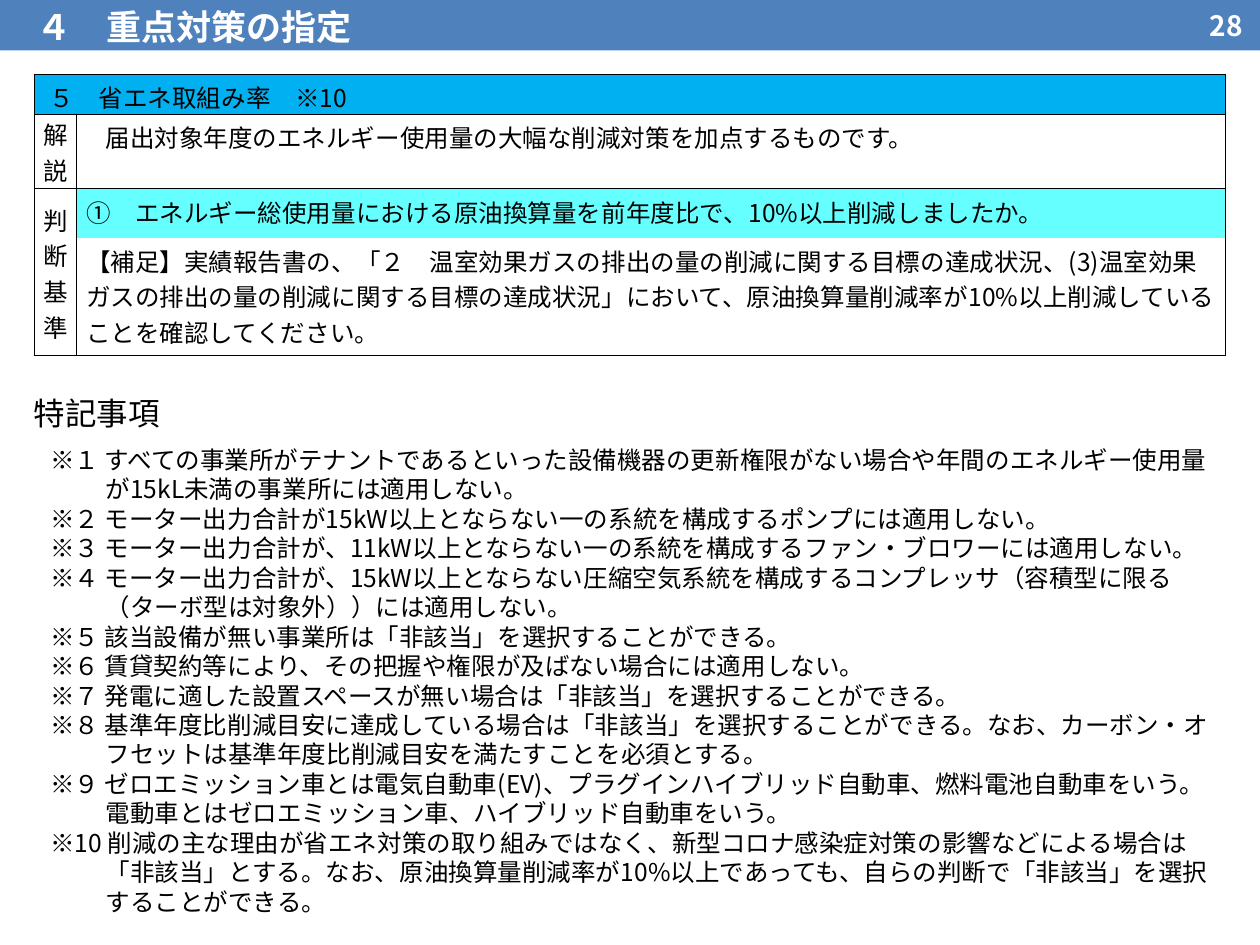
from lxml import etree
from pptx import Presentation
from pptx.dml.color import RGBColor
from pptx.enum.shapes import MSO_SHAPE
from pptx.enum.text import MSO_ANCHOR, PP_ALIGN
from pptx.oxml.ns import qn
from pptx.util import Pt

LEFT, CENTER, RIGHT = PP_ALIGN.LEFT, PP_ALIGN.CENTER, PP_ALIGN.RIGHT
TOP, MIDDLE = MSO_ANCHOR.TOP, MSO_ANCHOR.MIDDLE
RECTANGLE = MSO_SHAPE.RECTANGLE

COLORS = {"band": "4F81BD", "white": "FFFFFF", "black": "000000",
          "heading": "00B0F0", "criterion": "66FFFF"}
FONT = "Noto Sans CJK JP"
HEADING_FONT = "Arial"
BODY_SIZE = 14

TITLE = "４　重点対策の指定"
PAGE_NUMBER = "28"
NOTES_HEADING = "特記事項"
COLUMN_WIDTHS = [23.6, 656.6]
ROW_HEIGHTS = [22, 42.7, 28, 67.6]

HEADING_MARGINS = (8.6, 2.9, 0, 2.9)
LABEL_MARGINS = (0.7, 0.7, 0.7, 0)
CRITERION_MARGINS = (5.8, 2.9, 5.8, 2.9)
CELLS = [
    {"at": (0, 0), "to": (0, 1), "text": "５　省エネ取組み率　※10",
     "margins": HEADING_MARGINS, "anchor": MIDDLE, "fill": "heading", "borders": "LRTB"},
    {"at": (1, 0), "text": "解説", "margins": LABEL_MARGINS,
     "anchor": MIDDLE, "vertical": True, "borders": "LRTB"},
    {"at": (1, 1), "text": "　届出対象年度のエネルギー使用量の大幅な削減対策を加点するものです。",
     "margins": (2.9, 2.9, 2.9, 2.9), "borders": "LRTB"},
    {"at": (2, 0), "to": (3, 0), "text": "判断基準", "margins": LABEL_MARGINS,
     "anchor": MIDDLE, "vertical": True, "borders": "LRTB"},
    {"at": (2, 1), "text": "①　エネルギー総使用量における原油換算量を前年度比で、10%以上削減しましたか。",
     "margins": CRITERION_MARGINS, "fill": "criterion", "borders": "LRT"},
    {"at": (3, 1), "text": "【補足】実績報告書の、「２　温室効果ガスの排出の量の削減に関する目標の達成状況、"
     "(3)温室効果ガスの排出の量の削減に関する目標の達成状況」において、"
     "原油換算量削減率が10%以上削減していることを確認してください。",
     "margins": CRITERION_MARGINS, "borders": "LRB"},
]
NOTES = [
    "※１ すべての事業所がテナントであるといった設備機器の更新権限がない場合や"
    "年間のエネルギー使用量が15kL未満の事業所には適用しない。",
    "※２ モーター出力合計が15kW以上とならない一の系統を構成するポンプには適用しない。",
    "※３ モーター出力合計が、11kW以上とならない一の系統を構成するファン・ブロワーには適用しない。",
    "※４ モーター出力合計が、15kW以上とならない圧縮空気系統を構成するコンプレッサ"
    "（容積型に限る（ターボ型は対象外））には適用しない。",
    "※５ 該当設備が無い事業所は「非該当」を選択することができる。",
    "※６ 賃貸契約等により、その把握や権限が及ばない場合には適用しない。",
    "※７ 発電に適した設置スペースが無い場合は「非該当」を選択することができる。",
    "※８ 基準年度比削減目安に達成している場合は「非該当」を選択することができる。"
    "なお、カーボン・オフセットは基準年度比削減目安を満たすことを必須とする。",
    "※９ ゼロエミッション車とは電気自動車(EV)、プラグインハイブリッド自動車、"
    "燃料電池自動車をいう。電動車とはゼロエミッション車、ハイブリッド自動車をいう。",
    "※10 削減の主な理由が省エネ対策の取り組みではなく、新型コロナ感染症対策の影響などによる場合は"
    "「非該当」とする。なお、原油換算量削減率が10%以上であっても、"
    "自らの判断で「非該当」を選択することができる。",
]


def color(name):
    return RGBColor.from_string(COLORS[name])


def write(paragraph, text, size=BODY_SIZE, ink="black", bold=False, font=FONT, align=LEFT):
    paragraph.alignment = align
    run = paragraph.add_run()
    run.text = text
    run.font.size = Pt(size)
    run.font.bold = bold
    run.font.name = font
    run.font.color.rgb = color(ink)
    east_asian = etree.SubElement(run._r.get_or_add_rPr(), qn("a:ea"))
    east_asian.set("typeface", font)


def set_frame(frame, margins=(7.2, 3.6, 7.2, 3.6), anchor=TOP, wrap=True):
    frame.word_wrap = wrap
    frame.vertical_anchor = anchor
    (frame.margin_left, frame.margin_top,
     frame.margin_right, frame.margin_bottom) = map(Pt, margins)


def add_rectangle(slide, box, fill):
    shape = slide.shapes.add_shape(RECTANGLE, *map(Pt, box))
    shape.shadow.inherit = False
    shape.fill.solid()
    shape.fill.fore_color.rgb = color(fill)
    shape.line.fill.background()
    return shape


def add_text(slide, box, text, anchor=TOP, wrap=True, **style):
    frame = slide.shapes.add_textbox(*map(Pt, box)).text_frame
    set_frame(frame, anchor=anchor, wrap=wrap)
    write(frame.paragraphs[0], text, **style)


def set_borders(cell, sides):
    properties = cell._tc.get_or_add_tcPr()
    for index, side in enumerate("LRTB"):
        line = etree.Element(qn(f"a:ln{side}"), w=str(Pt(0.5)))
        if side in sides:
            fill = etree.SubElement(line, qn("a:solidFill"))
            etree.SubElement(fill, qn("a:srgbClr"), val=COLORS["black"])
        else:
            etree.SubElement(line, qn("a:noFill"))
        properties.insert(index, line)


def add_criteria_table(slide):
    table = slide.shapes.add_table(
        len(ROW_HEIGHTS), len(COLUMN_WIDTHS), Pt(19.8), Pt(42.5),
        Pt(sum(COLUMN_WIDTHS)), Pt(sum(ROW_HEIGHTS))).table
    table.first_row = table.horz_banding = False
    for column, width in zip(table.columns, COLUMN_WIDTHS):
        column.width = Pt(width)
    for row, height in zip(table.rows, ROW_HEIGHTS):
        row.height = Pt(height)
    for item in CELLS:
        cell = table.cell(*item["at"])
        last = table.cell(*item.get("to", item["at"]))
        if "to" in item:
            cell.merge(last)
        (cell.margin_left, cell.margin_top,
         cell.margin_right, cell.margin_bottom) = map(Pt, item["margins"])
        cell.vertical_anchor = item.get("anchor", TOP)
        vertical = item.get("vertical", False)
        if vertical:
            cell._tc.get_or_add_tcPr().set("vert", "eaVert")
        write(cell.text_frame.paragraphs[0], item["text"], align=CENTER if vertical else LEFT)
        for part in {item["at"]: cell, item.get("to", item["at"]): last}.values():
            part.fill.solid()
            part.fill.fore_color.rgb = color(item.get("fill", "white"))
            set_borders(part, item["borders"])


def add_notes(slide):
    frame = add_rectangle(slide, (13.7, 250.6, 691.9, 270), "white").text_frame
    set_frame(frame)
    for index, note in enumerate(NOTES):
        paragraph = frame.paragraphs[0] if index == 0 else frame.add_paragraph()
        paragraph.line_spacing = Pt(16.85)
        properties = paragraph._p.get_or_add_pPr()
        properties.set("marL", str(Pt(39.6)))
        properties.set("indent", str(Pt(-31.7)))
        write(paragraph, note)


def main():
    presentation = Presentation()
    presentation.slide_width, presentation.slide_height = Pt(720), Pt(540)
    slide = presentation.slides.add_slide(presentation.slide_layouts[5])

    band = add_rectangle(slide, (0, 0, 720, 28.8), "band")
    title = slide.shapes.title
    title._element.addprevious(band._element)
    title.left, title.top, title.width, title.height = map(Pt, (13.7, 0, 542.2, 27.4))
    set_frame(title.text_frame, (7.2, 2.9, 7.2, 0))
    title.text_frame.paragraphs[0].line_spacing = Pt(24)
    write(title.text_frame.paragraphs[0], TITLE, size=20, ink="white", bold=True)

    add_text(slide, (632.9, 1.4, 84.2, 25.9), PAGE_NUMBER, anchor=MIDDLE,
             size=16, ink="white", bold=True, align=RIGHT)
    add_criteria_table(slide)
    add_notes(slide)
    add_text(slide, (12.2, 221.8, 87.1, 28.8), NOTES_HEADING, wrap=False,
             size=18, font=HEADING_FONT)
    presentation.save("out.pptx")


if __name__ == "__main__":
    main()
